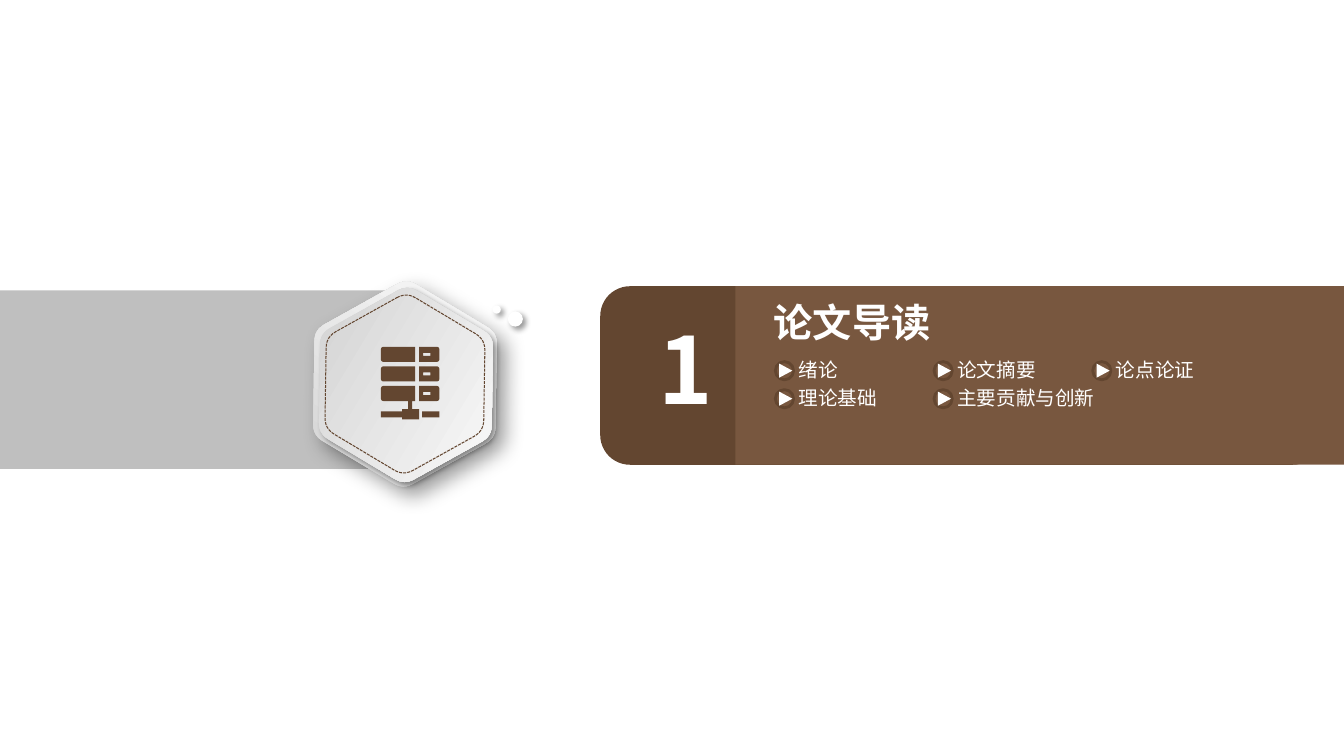
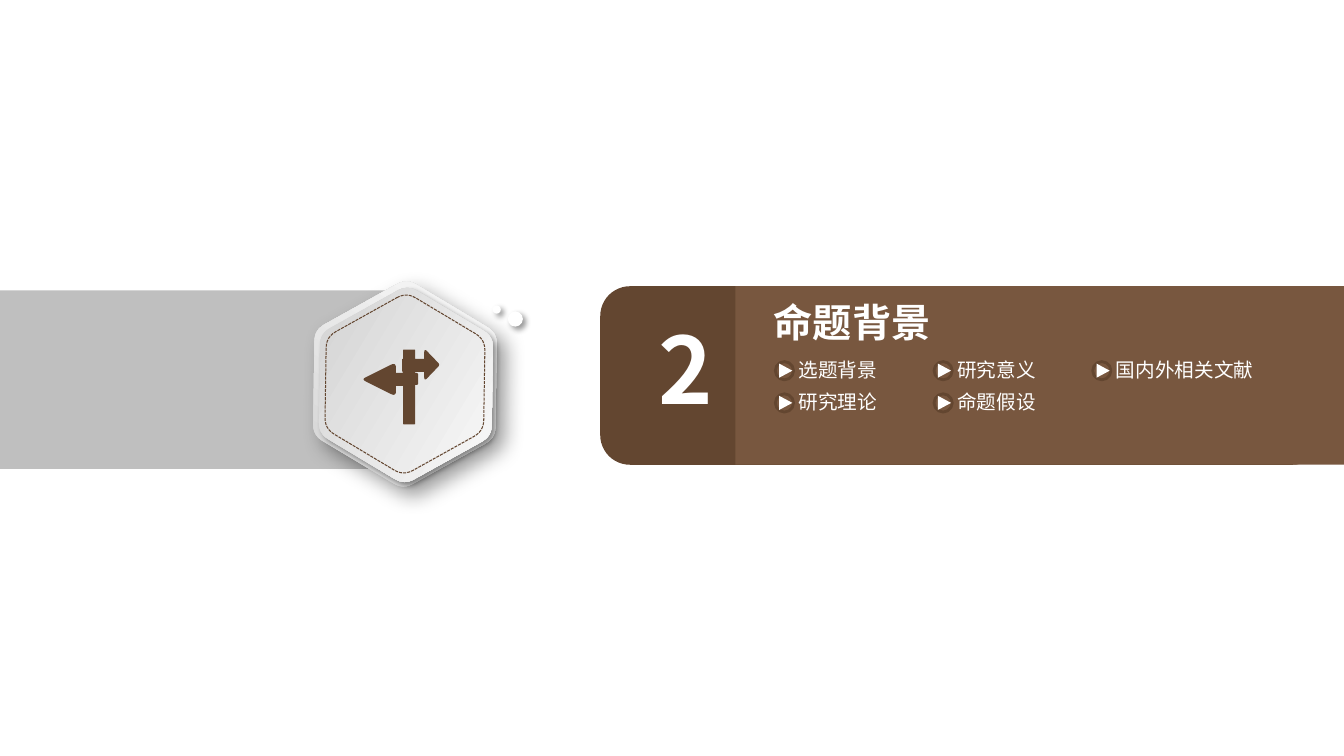
from math import cos, radians, sin

from lxml import etree
from pptx import Presentation
from pptx.dml.color import RGBColor
from pptx.enum.dml import MSO_LINE
from pptx.enum.shapes import MSO_SHAPE
from pptx.enum.text import PP_ALIGN
from pptx.oxml.ns import qn
from pptx.util import Pt

RECTANGLE = MSO_SHAPE.RECTANGLE
ROUNDED = MSO_SHAPE.ROUNDED_RECTANGLE
OVAL = MSO_SHAPE.OVAL
TRIANGLE = MSO_SHAPE.ISOSCELES_TRIANGLE
DASHED = MSO_LINE.SQUARE_DOT
LEFT, CENTER = PP_ALIGN.LEFT, PP_ALIGN.CENTER

WIDTH, HEIGHT = 960.48, 540
FONT = "Noto Sans CJK SC"
COLORS = {
    "band": "BFBFBF",
    "dark": "634630",
    "brown": "78573F",
    "white": "FFFFFF",
    "shade": "D3D3D3",
    "light": "F9F9F9",
    "shadow": "000000",
}


def color(name):
    """Return the named colour."""
    return RGBColor.from_string(COLORS[name])


def add_shadow(shape, blur, distance):
    """Give a shape a soft shadow towards the lower right."""
    effects = shape._element.spPr.find(qn("a:effectLst"))
    outer = etree.SubElement(effects, qn("a:outerShdw"), blurRad=str(Pt(blur)),
                             dist=str(Pt(distance)), dir="2700000", algn="tl", rotWithShape="0")
    tone = etree.SubElement(outer, qn("a:srgbClr"), val=COLORS["shadow"])
    etree.SubElement(tone, qn("a:alpha"), val="40000")


def style(shape, fill=None, line=None, weight=1, dash=None, angle=None, shadow=None):
    """Set the fill, outline and shadow of a shape."""
    shape.shadow.inherit = False
    if angle is not None:
        shape.fill.gradient()
        shape.fill.gradient_angle = angle
        for stop, name in zip(shape.fill.gradient_stops, ("shade", "light")):
            stop.color.rgb = color(name)
    elif fill:
        shape.fill.solid()
        shape.fill.fore_color.rgb = color(fill)
    else:
        shape.fill.background()
    if line:
        shape.line.color.rgb = color(line)
        shape.line.width = Pt(weight)
        if dash:
            shape.line.dash_style = dash
    else:
        shape.line.fill.background()
    if shadow:
        add_shadow(shape, *shadow)
    return shape


def add_preset(page, kind, left, top, width, height, **look):
    """Place a preset shape."""
    shape = page.shapes.add_shape(kind, Pt(left), Pt(top), Pt(width), Pt(height))
    return style(shape, **look)


def add_outline(page, left, top, contours, **look):
    """Place one freeform made of closed contours relative to a corner."""
    placed = [[(Pt(left + x), Pt(top + y)) for x, y in contour] for contour in contours]
    builder = page.shapes.build_freeform(*placed[0][0])
    for index, (start, *rest) in enumerate(placed):
        if index:
            builder.move_to(*start)
        builder.add_line_segments(rest, close=True)
    return style(builder.convert_to_shape(), **look)


def add_text(page, text, left, top, width, height, size=14, bold=False, align=LEFT):
    """Place white text in a box without margins."""
    box = page.shapes.add_textbox(Pt(left), Pt(top), Pt(width), Pt(height))
    frame = box.text_frame
    frame.word_wrap = True
    frame.margin_left = frame.margin_right = frame.margin_top = frame.margin_bottom = 0
    para = frame.paragraphs[0]
    para.alignment = align
    span = para.add_run()
    span.text = text
    span.font.size = Pt(size)
    span.font.bold = bold
    span.font.name = FONT
    span.font.color.rgb = color("white")
    etree.SubElement(span._r.get_or_add_rPr(), qn("a:ea"), typeface=FONT)


def toward(start, end, distance):
    """Return the point a given distance from start in the direction of end."""
    across, down = end[0] - start[0], end[1] - start[1]
    share = distance / (across ** 2 + down ** 2) ** 0.5
    return start[0] + across * share, start[1] + down * share


def rounded(corners, steps=6):
    """Round each (x, y, trim) corner with a quadratic curve."""
    points = []
    for index, (x, y, trim) in enumerate(corners):
        if not trim:
            points.append((x, y))
            continue
        before = toward((x, y), corners[index - 1], trim)
        after = toward((x, y), corners[(index + 1) % len(corners)], trim)
        for step in range(steps + 1):
            t = step / steps
            points.append(tuple((1 - t) ** 2 * a + 2 * t * (1 - t) * b + t ** 2 * c
                                for a, b, c in zip(before, (x, y), after)))
    return points


def block(left, top, right, bottom, left_trim=0, right_trim=0):
    """Return a rectangular contour with optional rounded sides."""
    return rounded([(left, top, left_trim), (right, top, right_trim),
                    (right, bottom, right_trim), (left, bottom, left_trim)])


def hexagon(radius, trim=7.8, tilt=0.9):
    """Return a rounded hexagon contour around the origin."""
    angles = [radians(60 * side - 90 + tilt) for side in range(6)]
    return rounded([(radius * cos(a), radius * sin(a), trim) for a in angles])


def add_badge(page, left, top):
    """Draw the layered hexagon and two dots around a centre."""
    add_outline(page, left, top, [hexagon(75.2)], angle=59, shadow=(15, 9))
    add_outline(page, left + 0.7, top + 0.7, [hexagon(71.3)], angle=329, shadow=(4, 3))
    add_outline(page, left, top, [hexagon(65.5)], line="dark", weight=0.75, dash=DASHED)
    for x, y, size in ((62.7, -56.1, 5.8), (73.5, -51.8, 10.8)):
        add_preset(page, OVAL, left + x, top + y, size, size, fill="white", shadow=(4, 3))


def add_server_icon(page, left, top):
    """Draw three stacked servers on a network line around a centre."""
    contours = []
    for row in range(3):
        y = 14 * row
        contours += [block(0, y, 24.5, y + 10.8, left_trim=2.2),
                     block(27.4, y, 41.8, y + 10.8, right_trim=2.2),
                     block(30.2, y + 4.3, 35.3, y + 6.5)]
    contours.append([(19.4, 38.8), (22.3, 38.8), (22.3, 44.6), (27.4, 44.6), (27.4, 51.8),
                     (15.1, 51.8), (15.1, 50.4), (0, 50.4), (0, 46.1), (15.1, 46.1),
                     (15.1, 44.6), (19.4, 44.6)])
    contours.append(block(29.5, 46.1, 41.8, 50.4))
    add_outline(page, left - 17.2, top - 26.6, contours, fill="dark")


def add_signpost_icon(page, left, top):
    """Draw a post with two arrow signs around a centre."""
    corners = [
        (28.1, 0, 0.5), (36.7, 0, 0.5), (36.7, 6.5, 0), (43.2, 6.5, 0), (43.2, -1, 3),
        (54.5, 10.8, 2), (43.2, 22.6, 3), (43.2, 15.8, 0), (36.7, 15.8, 0),
        (36.7, 16.6, 0), (38.9, 16.6, 1.5), (38.9, 25.2, 1.5), (36.7, 25.2, 0),
        (36.7, 53.3, 0.5), (28.1, 53.3, 0.5), (28.1, 25.9, 0), (23, 25.9, 0),
        (23, 33.5, 4), (-1.5, 21.2, 3), (23, 9, 4), (23, 16.6, 0), (28.1, 16.6, 0),
        (27.4, 15.1, 0), (27.4, 6.5, 0.7), (28.1, 6.5, 0),
    ]
    add_outline(page, left - 29.4, top - 24.5, [rounded(corners)], fill="dark")


def add_item(page, text, left, top):
    """Draw one play bullet with its label."""
    add_text(page, text, left + 16.6, top, 112, 21)
    add_preset(page, OVAL, left, top + 2.7, 13, 13, fill="brown", line="dark", weight=2)
    arrow = add_preset(page, TRIANGLE, left + 2.4, top + 4.5, 10.1, 9.4, fill="white")
    arrow.rotation = 90


def add_panel(page, number, title, items, pitch, left, top, height):
    """Draw the chapter panel with number, title and a three-column item grid."""
    add_preset(page, ROUNDED, left, top, 516.2, height, fill="dark")
    add_preset(page, RECTANGLE, left + 96.5, top, WIDTH - left - 96.5, height, fill="brown")
    add_text(page, number, left + 31, top + 18.7, 60, 96, size=66, bold=True, align=CENTER)
    add_text(page, title, left + 124, top + 8.6, 210, 42, size=28, bold=True)
    for index, text in enumerate(items):
        row, column = divmod(index, 3)
        add_item(page, text, left + 125.1 + 113.4 * column, top + 51.1 + pitch * row)


def add_chapter(deck, number, title, items, pitch, add_icon):
    """Add one chapter divider slide."""
    page = deck.slides.add_slide(deck.slide_layouts[6])
    add_preset(page, RECTANGLE, 0, 207.5, 293, 127.5, fill="band")
    add_badge(page, 289.4, 274.3)
    add_icon(page, 289.4, 274.3)
    add_panel(page, number, title, items, pitch, 429, 204.5, 127.5)


def main():
    """Build the deck and save it."""
    deck = Presentation()
    deck.slide_width, deck.slide_height = Pt(WIDTH), Pt(HEIGHT)
    add_chapter(deck, "1", "论文导读",
                ["绪论", "论文摘要", "论点论证", "理论基础", "主要贡献与创新"],
                20, add_server_icon)
    add_chapter(deck, "2", "命题背景",
                ["选题背景", "研究意义", "国内外相关文献", "研究理论", "命题假设"],
                23, add_signpost_icon)
    deck.save("out.pptx")


if __name__ == "__main__":
    main()
